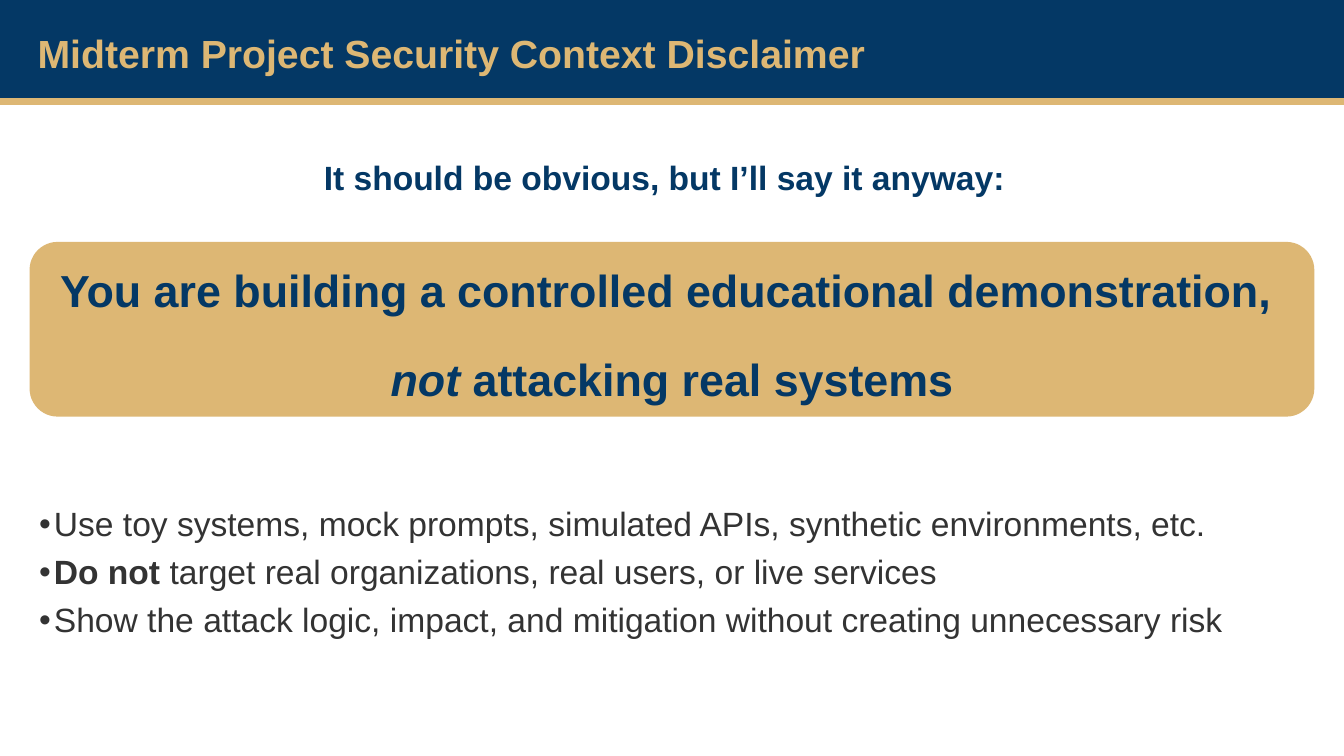
from pptx import Presentation
from pptx.dml.color import RGBColor
from pptx.enum.shapes import MSO_CONNECTOR, MSO_SHAPE
from pptx.enum.text import MSO_ANCHOR, MSO_AUTO_SIZE, PP_ALIGN
from pptx.oxml.ns import qn
from pptx.util import Cm, Pt
from lxml.etree import SubElement

NAVY = RGBColor(0x04, 0x38, 0x65)
GOLD = RGBColor(0xDD, 0xB7, 0x74)
CHARCOAL = RGBColor(0x33, 0x33, 0x33)
FONT = "Arial"
LINE_SPACING = 1.05
SLIDE_WIDTH, SLIDE_HEIGHT = Cm(25.4), Cm(14.28)


def set_frame(frame):
    """Wrap the text, anchor it at the top and remove the insets."""
    frame.word_wrap = True
    frame.auto_size = MSO_AUTO_SIZE.NONE
    frame.vertical_anchor = MSO_ANCHOR.TOP
    frame.margin_left = frame.margin_top = 0
    frame.margin_right = frame.margin_bottom = 0


def add_textbox(slide, left, top, width, height):
    frame = slide.shapes.add_textbox(left, top, width, height).text_frame
    set_frame(frame)
    return frame


def add_run(paragraph, text, size, color, bold=False, italic=False):
    run = paragraph.add_run()
    run.text = text
    font = run.font
    font.name, font.size = FONT, Pt(size)
    font.bold, font.italic = bold, italic
    font.color.rgb = color


def next_paragraph(frame, index, before=0, after=0, align=PP_ALIGN.LEFT):
    paragraph = frame.add_paragraph() if index else frame.paragraphs[0]
    paragraph.alignment = align
    paragraph.line_spacing = LINE_SPACING
    paragraph.space_before = Pt(before if index else 0)
    paragraph.space_after = Pt(after)
    return paragraph


def add_panel(slide, kind, color, left, top, width, height):
    panel = slide.shapes.add_shape(kind, left, top, width, height)
    panel.shadow.inherit = False
    panel.fill.solid()
    panel.fill.fore_color.rgb = color
    panel.line.fill.background()
    return panel


def add_header(slide, text, left, top, width, height):
    add_panel(slide, MSO_SHAPE.RECTANGLE, NAVY, left, top, width, height)

    rule_y = top + height - Cm(0.05)
    rule = slide.shapes.add_connector(
        MSO_CONNECTOR.STRAIGHT, left, rule_y, left + width, rule_y)
    rule.line.color.rgb = GOLD
    rule.line.width = Pt(3.75)
    SubElement(rule._element.spPr, qn("a:effectLst"))

    title = slide.shapes.title
    title.left, title.top = left + Cm(0.71), top + Cm(0.5)
    title.width, title.height = width - Cm(0.94), Cm(0.84)
    set_frame(title.text_frame)
    add_run(next_paragraph(title.text_frame, 0), text, 21, GOLD, bold=True)
    # The title has to lie in front of the banner.
    slide.shapes._spTree.append(title._element)


def add_lead_in(slide, text, left, top, width, height):
    frame = add_textbox(slide, left, top, width, height)
    add_run(next_paragraph(frame, 0, after=6), text, 18, NAVY, bold=True)


def add_callout(slide, lines, left, top, width, height):
    """Each line is a list of (text, italic) runs."""
    panel = add_panel(slide, MSO_SHAPE.ROUNDED_RECTANGLE, GOLD,
                      left, top, width, height)
    panel.adjustments[0] = 0.16

    pad_x, pad_y = Cm(0.13), Cm(0.35)
    frame = add_textbox(slide, left + pad_x, top + pad_y,
                        width - 2 * pad_x, height - 2 * pad_y)
    for index, runs in enumerate(lines):
        paragraph = next_paragraph(frame, index, 11, 6, PP_ALIGN.CENTER)
        for text, italic in runs:
            add_run(paragraph, text, 24, NAVY, bold=True, italic=italic)


def add_bullets(slide, items, left, top, width, height):
    """Each item is a list of (text, bold) runs."""
    frame = add_textbox(slide, left, top, width, height)
    indent = Cm(0.28)
    frame.margin_left = indent
    for index, runs in enumerate(items):
        paragraph = next_paragraph(frame, index, after=3)
        properties = paragraph._p.get_or_add_pPr()
        properties.set("marL", str(indent))
        properties.set("indent", str(-indent))
        SubElement(properties, qn("a:buFont"), typeface=FONT)
        SubElement(properties, qn("a:buChar"), char="•")
        for text, bold in runs:
            add_run(paragraph, text, 18, CHARCOAL, bold=bold)


def main():
    presentation = Presentation()
    presentation.slide_width = SLIDE_WIDTH
    presentation.slide_height = SLIDE_HEIGHT
    slide = presentation.slides.add_slide(presentation.slide_layouts[5])

    add_header(slide, "Midterm Project Security Context Disclaimer",
               0, 0, SLIDE_WIDTH, Cm(1.96))
    add_lead_in(slide, "It should be obvious, but I’ll say it anyway:",
                Cm(6.12), Cm(2.92), Cm(13.13), Cm(0.74))
    add_callout(slide, [
        [("You are building a controlled educational demonstration, ", False)],
        [("not", True), (" attacking real systems", False)],
    ], Cm(0.56), Cm(4.57), Cm(24.28), Cm(3.3))
    add_bullets(slide, [
        [("Use toy systems, mock prompts, simulated APIs, "
          "synthetic environments, etc.", False)],
        [("Do not ", True),
         ("target real organizations, real users, or live services", False)],
        [("Show the attack logic, impact, and mitigation "
          "without creating unnecessary risk", False)],
    ], Cm(0.46), Cm(9.47), Cm(24.28), Cm(2.87))

    presentation.save("out.pptx")


if __name__ == "__main__":
    main()
